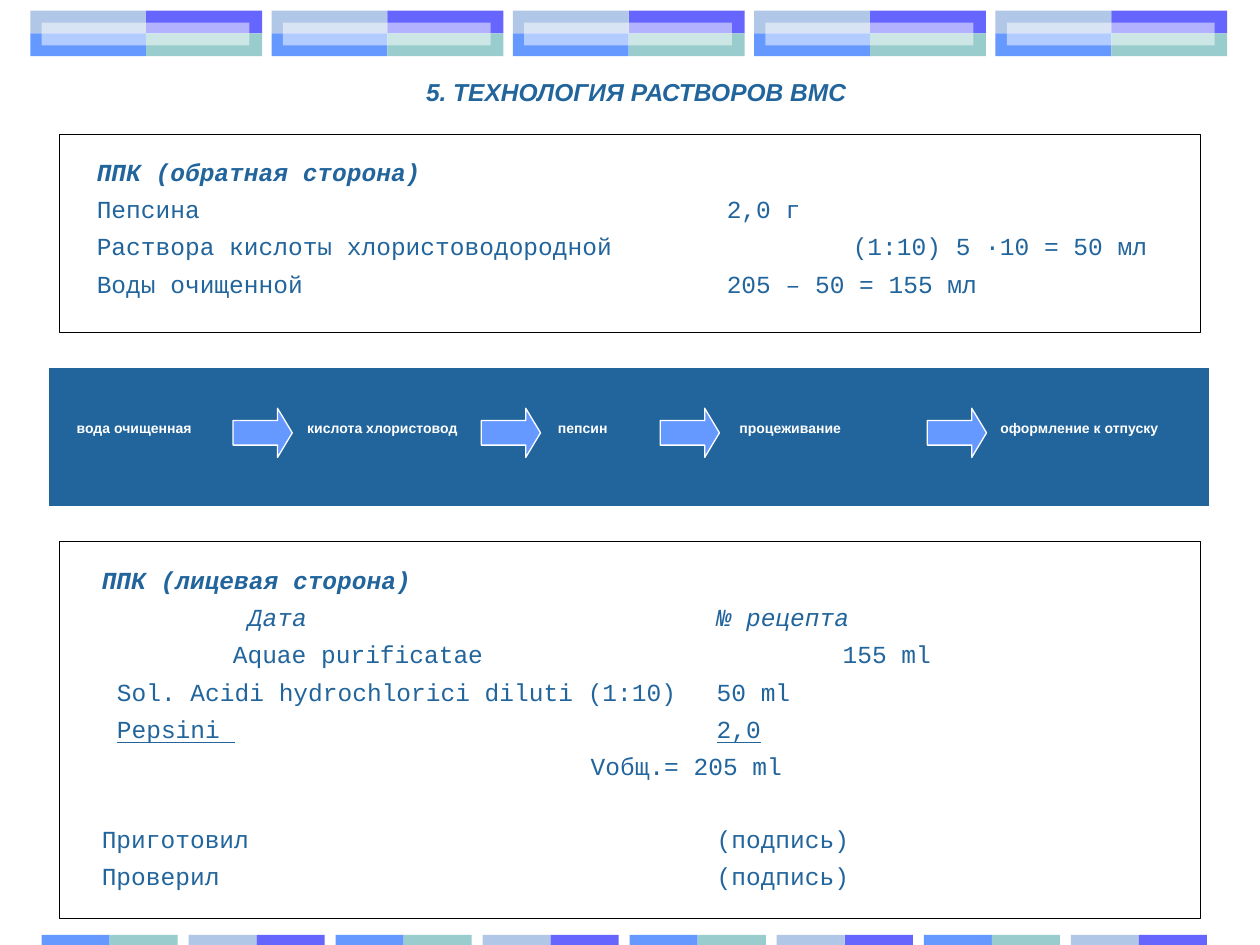
from dataclasses import dataclass

from lxml import etree
from pptx import Presentation
from pptx.dml.color import RGBColor
from pptx.enum.shapes import MSO_SHAPE
from pptx.enum.text import MSO_ANCHOR, PP_ALIGN
from pptx.oxml.ns import qn
from pptx.util import Inches, Pt

RECTANGLE, ARROW = MSO_SHAPE.RECTANGLE, MSO_SHAPE.RIGHT_ARROW
TOP, MIDDLE, CENTER = MSO_ANCHOR.TOP, MSO_ANCHOR.MIDDLE, PP_ALIGN.CENTER

WHITE = RGBColor(0xFF, 0xFF, 0xFF)
BLACK = RGBColor(0x00, 0x00, 0x00)
NAVY = RGBColor(0x22, 0x65, 0x9C)
BLUE = RGBColor(0x66, 0x99, 0xFF)
VIOLET = RGBColor(0x66, 0x66, 0xFF)
TEAL = RGBColor(0x99, 0xCC, 0xCC)
PALE = RGBColor(0xB1, 0xC7, 0xE7)


@dataclass(frozen=True)
class Cell:
    text: str
    position: float = 0


@dataclass(frozen=True)
class Line:
    cells: tuple[Cell, ...]
    bold: bool = False
    italic: bool = False
    underline: bool = False
    space_before: float = 0


@dataclass(frozen=True)
class Step:
    text: str
    left: float
    width: float


FIRST, SECOND = 5.0, 6.0
BACK_SIDE = (
    Line((Cell("ППК (обратная сторона)"),), bold=True, italic=True),
    Line((Cell("Пепсина"), Cell("2,0 г", FIRST))),
    Line((Cell("Раствора кислоты хлористоводородной"),
          Cell("(1:10) 5 ·10 = 50 мл", SECOND))),
    Line((Cell("Воды очищенной"), Cell("205 – 50 = 155 мл", FIRST))),
)
FRONT_FIRST, FRONT_SECOND = 4.88, 5.88
FRONT_SIDE = (
    Line((Cell("ППК (лицевая сторона)"),), bold=True, italic=True),
    Line((Cell("Дата", 1.16), Cell("№ рецепта", FRONT_FIRST)), italic=True),
    Line((Cell("Aquae purificatae", 1.04), Cell("155 ml", FRONT_SECOND))),
    Line((Cell("Sol. Acidi hydrochlorici diluti (1:10)", 0.12),
          Cell("50 ml", FRONT_FIRST))),
    Line((Cell("Pepsini ", 0.12), Cell("2,0", FRONT_FIRST)), underline=True),
    Line((Cell("Vобщ.= 205 ml", 3.88),)),
    Line((Cell("Приготовил"), Cell("(подпись)", FRONT_FIRST)), space_before=20),
    Line((Cell("Проверил"), Cell("(подпись)", FRONT_FIRST))),
)
STEPS = (
    Step("вода очищенная", 0.51, 1.34),
    Step("кислота хлористовод", 2.34, 1.5),
    Step("пепсин", 4.33, 0.94),
    Step("процеживание", 5.77, 1.67),
    Step("оформление к отпуску", 7.84, 1.65),
)
ARROW_LEFTS = (1.85, 3.82, 5.24, 7.36)


def add_block(shapes, left: float, top: float, width: float, height: float,
              fill: RGBColor, *, kind=RECTANGLE, line: RGBColor | None = None,
              line_width: float = 0.75):
    shape = shapes.add_shape(kind, Inches(left), Inches(top), Inches(width), Inches(height))
    shape.shadow.inherit = False
    shape.fill.solid()
    shape.fill.fore_color.rgb = fill
    if line is None:
        shape.line.fill.background()
    else:
        shape.line.color.rgb = line
        shape.line.width = Pt(line_width)
    return shape


def add_text(paragraph, text: str, *, font: str = "Arial", size: float = 14,
             color: RGBColor = NAVY, bold: bool = False, italic: bool = False,
             underline: bool = False) -> None:
    run = paragraph.add_run()
    run.text = text
    run.font.name = font
    run.font.size = Pt(size)
    run.font.color.rgb = color
    run.font.bold, run.font.italic, run.font.underline = bold, italic, underline


def add_text_box(shapes, left: float, top: float, width: float, height: float, anchor):
    frame = shapes.add_textbox(Inches(left), Inches(top), Inches(width), Inches(height)).text_frame
    frame.word_wrap = True
    frame.vertical_anchor = anchor
    return frame


def set_tab_stops(paragraph, positions: list[float]) -> None:
    tabs = etree.SubElement(paragraph._p.get_or_add_pPr(), qn("a:tabLst"))
    for position in positions:
        etree.SubElement(tabs, qn("a:tab"), pos=str(Inches(position)), algn="l")


def add_lines(frame, lines: tuple[Line, ...]) -> None:
    for index, line in enumerate(lines):
        paragraph = frame.add_paragraph() if index else frame.paragraphs[0]
        paragraph.line_spacing = 1.27
        paragraph.space_before = Pt(line.space_before)
        set_tab_stops(paragraph, [cell.position for cell in line.cells if cell.position])
        for cell in line.cells:
            if cell.position:
                add_text(paragraph, "\t", font="Courier New")
            add_text(paragraph, cell.text, font="Courier New", bold=line.bold,
                     italic=line.italic, underline=line.underline)


def add_top_band(shapes) -> None:
    width, height = 0.92, 0.18
    for index in range(5):
        left, top = 0.24 + 1.915 * index, 0.085
        for row, colors in enumerate(((PALE, VIOLET), (BLUE, TEAL))):
            for column, color in enumerate(colors):
                add_block(shapes, left + column * width, top + row * height, width, height, color)
        veil = add_block(shapes, left + 0.09, 0.18, 1.65, height, WHITE)
        color_element = veil.fill._xPr.find(qn("a:solidFill"))[0]
        etree.SubElement(color_element, qn("a:alpha"), val="50000")


def add_bottom_band(shapes) -> None:
    width = 0.54
    for index in range(8):
        left = 0.33 + 1.167 * index
        for column, color in enumerate((PALE, VIOLET) if index % 2 else (BLUE, TEAL)):
            add_block(shapes, left + column * width, 7.42, width, 0.08, color)


def add_process(shapes) -> None:
    add_block(shapes, 0.35, 2.88, 9.29, 1.18, NAVY, line=WHITE, line_width=6)
    for step in STEPS:
        frame = add_text_box(shapes, step.left, 3.1, step.width, 0.6, MIDDLE)
        add_text(frame.paragraphs[0], step.text, size=8, color=WHITE, bold=True)
    for left in ARROW_LEFTS:
        arrow = add_block(shapes, left, 3.24, 0.47, 0.39, BLUE, kind=ARROW, line=WHITE)
        arrow.adjustments[1] = 0.3


def add_title(slide) -> None:
    title = slide.shapes.title
    title.left, title.top = Inches(0.8), Inches(0.56)
    title.width, title.height = Inches(8.5), Inches(0.33)
    title.text_frame.vertical_anchor = MIDDLE
    paragraph = title.text_frame.paragraphs[0]
    paragraph.alignment = CENTER
    add_text(paragraph, "5. ТЕХНОЛОГИЯ РАСТВОРОВ ВМС", bold=True, italic=True)


def main() -> None:
    presentation = Presentation()
    presentation.slide_width, presentation.slide_height = Inches(10), Inches(7.5)
    slide = presentation.slides.add_slide(presentation.slide_layouts[5])
    shapes = slide.shapes
    add_top_band(shapes)
    add_bottom_band(shapes)
    add_title(slide)
    add_block(shapes, 0.47, 1.07, 9.06, 1.57, WHITE, line=BLACK)
    add_lines(add_text_box(shapes, 0.67, 1.13, 8.66, 1.42, TOP), BACK_SIDE)
    add_process(shapes)
    add_block(shapes, 0.47, 4.3, 9.06, 2.99, WHITE, line=BLACK)
    add_lines(add_text_box(shapes, 0.71, 4.37, 8.7, 2.76, TOP), FRONT_SIDE)
    presentation.save("out.pptx")


if __name__ == "__main__":
    main()
